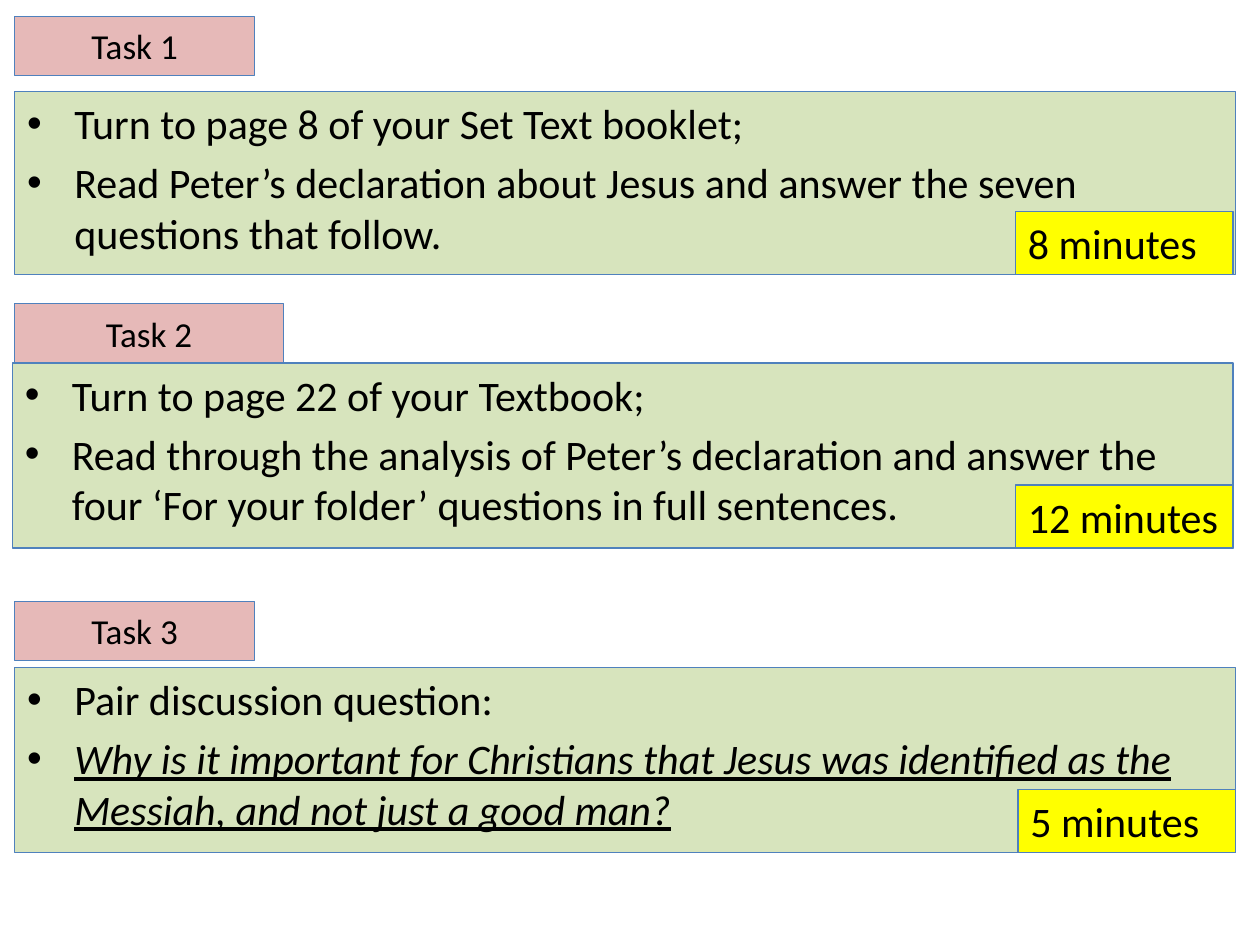
"""Build a slide of three timed class tasks."""
from dataclasses import dataclass

from lxml import etree
from pptx import Presentation
from pptx import util as u
from pptx.dml import color as col
from pptx.enum import shapes, text
from pptx.oxml import ns

PINK = col.RGBColor(0xE6, 0xB9, 0xB8)
GREEN = col.RGBColor(0xD7, 0xE4, 0xBD)
YELLOW = col.RGBColor(0xFF, 0xFF, 0x00)
BLUE = col.RGBColor(0x4F, 0x81, 0xBD)
BLACK = col.RGBColor(0, 0, 0)

EDGE = 0.3
TAG_HIGH = 1.19
BODY_WIDE = 24.61
TIME_WIDE, TIME_HIGH = 4.39, 1.27
HANG = u.Cm(0.95)


@dataclass(frozen=True)
class Box:
    left: float
    top: float
    width: float
    height: float


@dataclass(frozen=True)
class Task:
    name: str
    tag_top: float
    tag_wide: float
    body: Box
    lines: tuple[str, str]
    time: str
    time_left: float
    stress: bool = False


TASKS = (
    Task("Task 1", 0.33, 4.83, Box(EDGE, 1.85, BODY_WIDE, 3.68),
         ("Turn to page 8 of your Set Text booklet;",
          "Read Peter’s declaration about Jesus and answer the seven questions that follow."),
         "8 minutes", 20.47),
    Task("Task 2", 6.12, 5.41, Box(0.25, 7.32, BODY_WIDE, 3.73),
         ("Turn to page 22 of your Textbook;",
          "Read through the analysis of Peter’s declaration and answer the four "
          "‘For your folder’ questions in full sentences."),
         "12 minutes", 20.47),
    Task("Task 3", 12.12, 4.83, Box(EDGE, 13.46, BODY_WIDE, 3.73),
         ("Pair discussion question:",
          "Why is it important for Christians that Jesus was identified as the "
          "Messiah, and not just a good man?"),
         "5 minutes", 20.52, True),
)


def draw_box(slide, box: Box, fill: col.RGBColor, words: str, size: int,
             align=text.PP_ALIGN.LEFT, anchor=text.MSO_ANCHOR.TOP):
    """Draw a filled, outlined rectangle and return its text frame."""
    shape = slide.shapes.add_shape(
        shapes.MSO_SHAPE.RECTANGLE, u.Cm(box.left), u.Cm(box.top),
        u.Cm(box.width), u.Cm(box.height))
    shape.shadow.inherit = False
    shape.fill.solid()
    shape.fill.fore_color.rgb = fill
    shape.line.color.rgb = BLUE
    shape.line.width = u.Pt(0.75)
    frame = shape.text_frame
    frame.word_wrap = True
    frame.vertical_anchor = anchor
    frame.text = words
    for para in frame.paragraphs:
        para.alignment = align
        for run in para.runs:
            run.font.name = "Calibri"
            run.font.size = u.Pt(size)
            run.font.color.rgb = BLACK
    return frame


def add_bullet(para) -> None:
    """Give a paragraph a hanging round bullet."""
    props = para._p.get_or_add_pPr()
    props.set("marL", str(HANG))
    props.set("indent", str(-HANG))
    etree.SubElement(props, ns.qn("a:buFont"), typeface="Arial")
    etree.SubElement(props, ns.qn("a:buChar"), char="•")


def draw_task(slide, task: Task) -> None:
    """Draw a task's tag, bulleted body and time box."""
    draw_box(slide, Box(EDGE, task.tag_top, task.tag_wide, TAG_HIGH), PINK,
             task.name, 20, text.PP_ALIGN.CENTER, text.MSO_ANCHOR.MIDDLE)
    body = task.body
    frame = draw_box(slide, body, GREEN, "\n".join(task.lines), 24)
    for para in frame.paragraphs:
        add_bullet(para)
    last = frame.paragraphs[-1]
    last.space_before = u.Pt(4.8)
    if task.stress:
        last.runs[0].font.italic = True
        last.runs[0].font.underline = True
    time_top = body.top + body.height - TIME_HIGH
    badge = draw_box(slide, Box(task.time_left, time_top, TIME_WIDE, TIME_HIGH),
                     YELLOW, task.time, 24)
    badge.auto_size = text.MSO_AUTO_SIZE.SHAPE_TO_FIT_TEXT


def main() -> None:
    """Build and save the slide."""
    deck = Presentation()
    deck.slide_width, deck.slide_height = u.Cm(25.4), u.Cm(19.05)
    slide = deck.slides.add_slide(deck.slide_layouts[6])
    for task in TASKS:
        draw_task(slide, task)
    deck.save("out.pptx")


if __name__ == "__main__":
    main()
